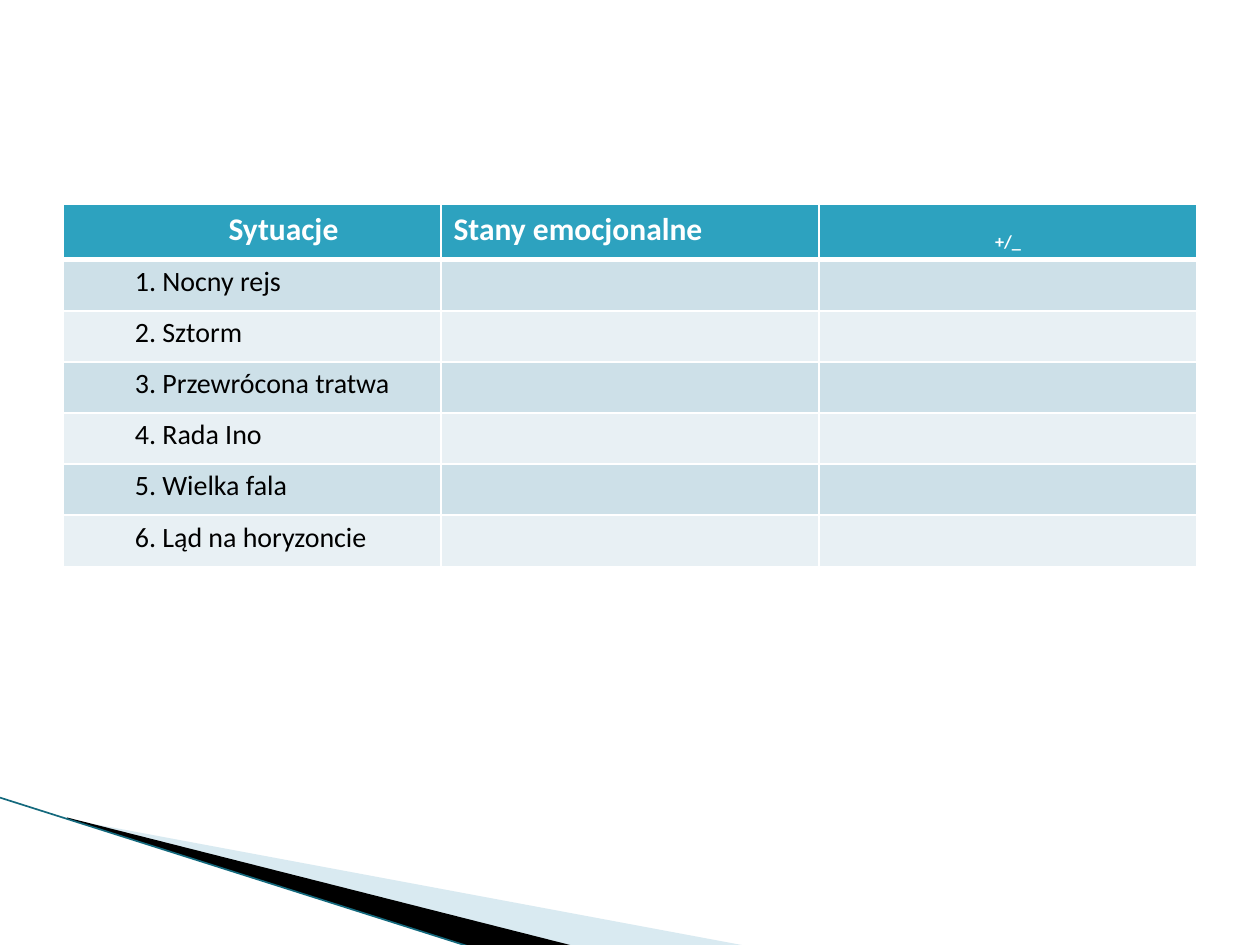
from lxml import etree
from pptx import Presentation
from pptx.dml.color import RGBColor
from pptx.enum.shapes import MSO_CONNECTOR
from pptx.enum.text import PP_ALIGN
from pptx.oxml.ns import qn
from pptx.util import Cm, Pt

LINE = MSO_CONNECTOR.STRAIGHT
LEFT, MID = PP_ALIGN.LEFT, PP_ALIGN.CENTER
FONT = "Calibri"
WHITE, BLACK = "FFFFFF", "000000"
HEAD, BANDS = "2DA2BF", ("CDE0E8", "E8F0F4")
ITEMS = ("Nocny rejs", "Sztorm", "Przewrócona tratwa", "Rada Ino",
         "Wielka fala", "Ląd na horyzoncie")


def color(text):
    return RGBColor.from_string(text)


def paint(fill, tint):
    fill.solid()
    fill.fore_color.rgb = color(tint)


def wedge(slide, left, top, points, tint, alpha=None):
    spots = [(Cm(left + x), Cm(top + y)) for x, y in points]
    build = slide.shapes.build_freeform(*spots[0])
    build.add_line_segments(spots[1:], close=True)
    shape = build.convert_to_shape()
    shape.shadow.inherit = False
    shape.line.fill.background()
    paint(shape.fill, tint)
    if alpha:
        tone = shape.fill._xPr.find(".//" + qn("a:srgbClr"))
        etree.SubElement(tone, qn("a:alpha")).set("val", str(alpha * 1000))


def corner(slide, left, top, width, height):
    wedge(slide, left, top,
          [(1.4, 0.44), (15.11, height), (11.58, height)], "A0CBDC", 40)
    wedge(slide, left, top,
          [(1.35, 0.4), (11.61, height), (width, height), (1.37, 0.43)], BLACK)
    edge = slide.shapes.add_connector(
        LINE, Cm(left), Cm(top), Cm(left + width), Cm(top + height))
    edge.line.color.rgb = color("14697D")
    edge.line.width = Pt(0.95)
    etree.SubElement(edge._element.spPr, qn("a:effectLst"))


def frame(cell, base):
    props = cell._tc.get_or_add_tcPr()
    for spot, side in enumerate("LRTB"):
        line = etree.Element(qn("a:ln" + side))
        line.set("w", str(Pt(base if side == "B" else 1)))
        fill = etree.SubElement(line, qn("a:solidFill"))
        etree.SubElement(fill, qn("a:srgbClr")).set("val", WHITE)
        props.insert(spot, line)


def write(cell, text, size, tint, bold=False, align=LEFT, inset=False, drop=0):
    para = cell.text_frame.paragraphs[0]
    para.alignment = align
    if inset:
        cell.margin_left = cell.margin_right = Cm(0.18)
        cell.margin_top = cell.margin_bottom = 0
        para.line_spacing = 1.15
        props = para._p.get_or_add_pPr()
        props.set("marL", str(Cm(1.27)))
        props.set("indent", "0")
    run = para.add_run()
    run.text = text
    font = run.font
    font.name, font.size, font.bold = FONT, Pt(size), bold
    font.color.rgb = color(tint)
    if drop:
        run._r.get_or_add_rPr().set("baseline", str(drop * 1000))


def chart(slide, left, top, width, height):
    count = len(ITEMS) + 1
    grid = slide.shapes.add_table(
        count, 3, Cm(left), Cm(top), Cm(width), Cm(height)).table
    for col in grid.columns:
        col.width = Cm(width / 3)
    for num, row in enumerate(grid.rows):
        row.height = Cm(height / count)
        for cell in row.cells:
            paint(cell.fill, BANDS[(num - 1) % 2] if num else HEAD)
            frame(cell, 1 if num else 3)
    write(grid.cell(0, 0), "Sytuacje", 18, WHITE, True, MID, inset=True)
    write(grid.cell(0, 1), "Stany emocjonalne", 18, WHITE, True)
    write(grid.cell(0, 2), "+/_", 18, WHITE, True, MID, drop=-25)
    for num, item in enumerate(ITEMS, 1):
        write(grid.cell(num, 0), f"{num}. {item}", 16, BLACK, inset=True)


def main():
    deck = Presentation()
    deck.slide_width, deck.slide_height = Cm(25.4), Cm(19.05)
    slide = deck.slides.add_slide(deck.slide_layouts[6])
    corner(slide, 0, 16.08, 9.45, 3)
    chart(slide, 1.27, 4.12, 22.86, 7.21)
    deck.save("out.pptx")


if __name__ == "__main__":
    main()
